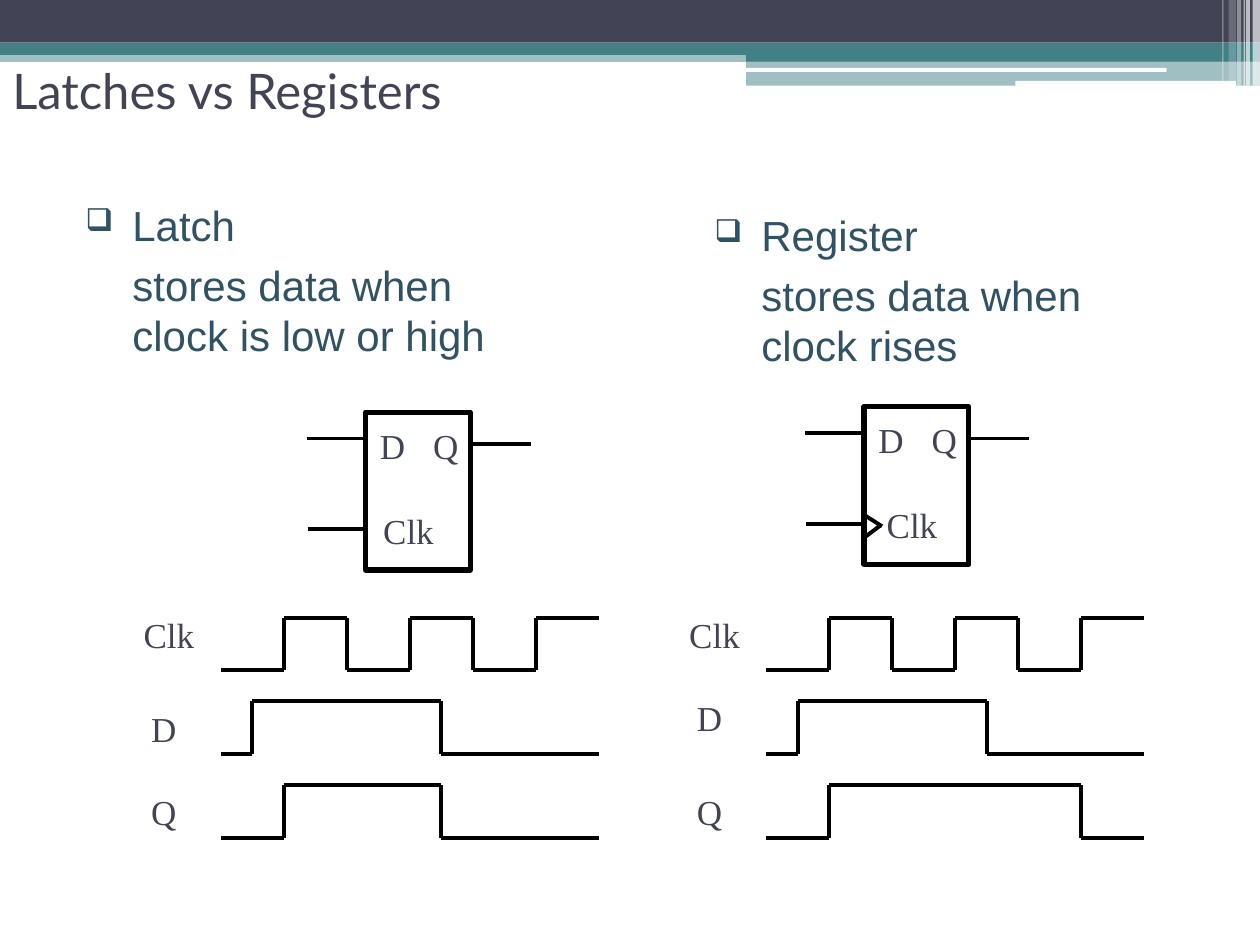
"""Build the slide that compares latches with registers."""
from lxml.etree import SubElement
from pptx import Presentation
from pptx.dml.color import RGBColor
from pptx.enum.shapes import MSO_CONNECTOR as Connector, MSO_SHAPE as Shape
from pptx.enum.text import MSO_ANCHOR as Anchor, MSO_AUTO_SIZE as AutoSize, PP_ALIGN as Align
from pptx.oxml.ns import qn
from pptx.util import Cm, Pt

NAVY = RGBColor(0x42, 0x44, 0x56)
TEAL = RGBColor(0x43, 0x80, 0x86)
SLATE = RGBColor(0x31, 0x52, 0x63)
WHITE = RGBColor(0xFF, 0xFF, 0xFF)
BLACK = RGBColor(0x00, 0x00, 0x00)

BANDS = [
    (Shape.RECTANGLE, (0, 1.02, 25.4, 0.23), TEAL, 50),
    (Shape.RECTANGLE, (0, 0, 25.4, 0.86), NAVY, 100),
    (Shape.RECTANGLE, (0, 0.86, 25.4, 0.25), TEAL, 100),
    (Shape.RECTANGLE, (15.04, 0.99, 10.36, 0.25), TEAL, 100),
    (Shape.RECTANGLE, (15.04, 1.22, 10.36, 0.51), TEAL, 50),
    (Shape.ROUNDED_RECTANGLE, (15.01, 1.37, 8.51, 0.08), WHITE, 100),
    (Shape.ROUNDED_RECTANGLE, (20.47, 1.63, 4.45, 0.1), WHITE, 100),
]
STRIPES = [
    (25.25, 0.15, 1.73, 65),
    (25.12, 0.08, 1.73, 65),
    (25.07, 0.03, 1.73, 60),
    (24.94, 0.08, 1.73, 40),
    (24.77, 0.15, 1.63, 20),
    (24.64, 0.03, 1.63, 30),
]

GATE_WIDTH, GATE_HEIGHT = 2.11, 3.18
LABEL_HEIGHT, LETTER_WIDTH, CLOCK_WIDTH = 1.09, 1.09, 1.73
WAVE_TOP, WAVE_PITCH, WAVE_HEIGHT = 12.45, 1.69, 1.06
HALF_CYCLE, WAVE_END = 1.27, 6

CLOCK_WAVE = [(step, step % 2) for step in range(WAVE_END)]
DATA_WAVE = [(0, 0), (0.5, 1), (3.5, 0), (4, 0), (5, 0)]
LATCH_WAVE = [(0, 0), (1, 1), (2, 1), (3, 1), (3.5, 0), (5, 0)]
REGISTER_WAVE = [(0, 0), (1, 1), (2, 1), (3, 1), (5, 0)]


def add_band(slide, kind, box, color, opacity):
    """Add a borderless filled shape with an opacity in percent."""
    shape = slide.shapes.add_shape(kind, *map(Cm, box))
    shape.shadow.inherit = False
    shape.fill.solid()
    shape.fill.fore_color.rgb = color
    shape.line.fill.background()
    if opacity < 100:
        color_element = shape.fill._xPr.find(qn("a:solidFill"))[0]
        SubElement(color_element, qn("a:alpha"), val=str(opacity * 1000))


def add_line(slide, start, end):
    """Add a straight black line between two points."""
    line = slide.shapes.add_connector(Connector.STRAIGHT, *map(Cm, (*start, *end)))
    line.line.color.rgb = BLACK
    line.line.width = Pt(2.25)
    SubElement(line._element.spPr, qn("a:effectLst"))


def style_font(paragraph, name, size, color):
    """Set the font of a whole paragraph."""
    paragraph.font.name = name
    paragraph.font.size = Pt(size)
    paragraph.font.color.rgb = color


def add_title(slide, text):
    """Add the slide heading."""
    frame = slide.shapes.add_textbox(Cm(0), Cm(1.12), Cm(22.86), Cm(1.4)).text_frame
    frame.word_wrap = True
    frame.vertical_anchor = Anchor.MIDDLE
    frame.text = text
    style_font(frame.paragraphs[0], "Lato", 28, NAVY)


def add_label(slide, text, left, top):
    """Add a centred signal name."""
    width = CLOCK_WIDTH if text == "Clk" else LETTER_WIDTH
    box = slide.shapes.add_textbox(Cm(left), Cm(top), Cm(width), Cm(LABEL_HEIGHT))
    frame = box.text_frame
    frame.word_wrap = False
    frame.auto_size = AutoSize.SHAPE_TO_FIT_TEXT
    frame.vertical_anchor = Anchor.MIDDLE
    frame.text = text
    paragraph = frame.paragraphs[0]
    paragraph.alignment = Align.CENTER
    style_font(paragraph, "Times New Roman", 20, NAVY)


def add_bullet(properties):
    """Give paragraph properties a hollow square bullet."""
    color = SubElement(properties, qn("a:buClr"))
    SubElement(color, qn("a:srgbClr"), val=str(SLATE))
    SubElement(properties, qn("a:buSzPct"), val="75000")
    SubElement(properties, qn("a:buChar"), char="❑")


def add_description(slide, name, behaviour, left, top, width):
    """Add a bulleted name with its behaviour indented below."""
    frame = slide.shapes.add_textbox(Cm(left), Cm(top), Cm(width), Cm(3.38)).text_frame
    frame.word_wrap = True
    frame.text = f"{name}\n\t{behaviour}"
    for index, paragraph in enumerate(frame.paragraphs):
        paragraph.space_before = Pt(5.5)
        properties = paragraph._p.get_or_add_pPr()
        properties.set("marL", str(Cm(0.95)))
        properties.set("indent", str(Cm(-0.95)))
        if index == 0:
            add_bullet(properties)
        style_font(paragraph, "Arial", 24, SLATE)


def add_gate(slide, left, top, edge_triggered):
    """Add a storage element with its leads, and a wedge if it is edge triggered."""
    gate = slide.shapes.add_shape(
        Shape.RECTANGLE, Cm(left), Cm(top), Cm(GATE_WIDTH), Cm(GATE_HEIGHT))
    gate.shadow.inherit = False
    gate.fill.background()
    gate.line.color.rgb = BLACK
    gate.line.width = Pt(3)
    segments = [(-1.19, 0.53, 0, 0.53), (-1.17, 2.36, 0.05, 2.36),
                (GATE_WIDTH, 0.64, 3.33, 0.64)]
    if edge_triggered:
        segments += [(-0.03, 2.16, 0.36, 2.41), (0, 2.64, 0.33, 2.39)]
    for x1, y1, x2, y2 in segments:
        add_line(slide, (left + x1, top + y1), (left + x2, top + y2))
    clock_inset = 0.1 if edge_triggered else 0
    for text, x, y in [("D", 0, 0.12), ("Clk", clock_inset, 1.83), ("Q", 1.07, 0.12)]:
        add_label(slide, text, left + x, top + y)


def add_wave(slide, left, top, levels):
    """Draw a signal from its (half cycle, level) steps."""
    points = [(left + step * HALF_CYCLE, top + (1 - level) * WAVE_HEIGHT)
              for step, level in levels]
    end_x = left + WAVE_END * HALF_CYCLE
    for (x, y), (next_x, next_y) in zip(points, points[1:] + [(end_x, points[-1][1])]):
        add_line(slide, (x, y), (next_x, y))
        if next_y != y:
            add_line(slide, (next_x, y), (next_x, next_y))


def add_timing(slide, left, output_wave, data_label_top):
    """Add the clock, data and output signals with their names."""
    rows = [("Clk", CLOCK_WAVE, -1.91, 12.24),
            ("D", DATA_WAVE, -1.69, data_label_top),
            ("Q", output_wave, -1.69, 15.82)]
    for row, (name, levels, label_shift, label_top) in enumerate(rows):
        add_wave(slide, left, WAVE_TOP + row * WAVE_PITCH, levels)
        add_label(slide, name, left + label_shift, label_top)


def main():
    """Build and save the slide."""
    presentation = Presentation()
    presentation.slide_width, presentation.slide_height = Cm(25.4), Cm(19.05)
    slide = presentation.slides.add_slide(presentation.slide_layouts[6])
    for band in BANDS:
        add_band(slide, *band)
    for left, width, height, opacity in STRIPES:
        add_band(slide, Shape.RECTANGLE, (left, 0, width, height), WHITE, opacity)
    add_title(slide, "Latches vs Registers")
    add_description(slide, "Latch", "stores data when \vclock is low or high",
                    1.47, 3.89, 11.53)
    add_gate(slide, 7.37, 8.31, edge_triggered=False)
    add_timing(slide, 4.45, LATCH_WAVE, 14.14)
    add_description(slide, "Register", "stores data when \vclock rises",
                    14.15, 4.1, 9.98)
    add_gate(slide, 17.42, 8.2, edge_triggered=True)
    add_timing(slide, 15.45, REGISTER_WAVE, 13.92)
    presentation.save("out.pptx")


if __name__ == "__main__":
    main()
